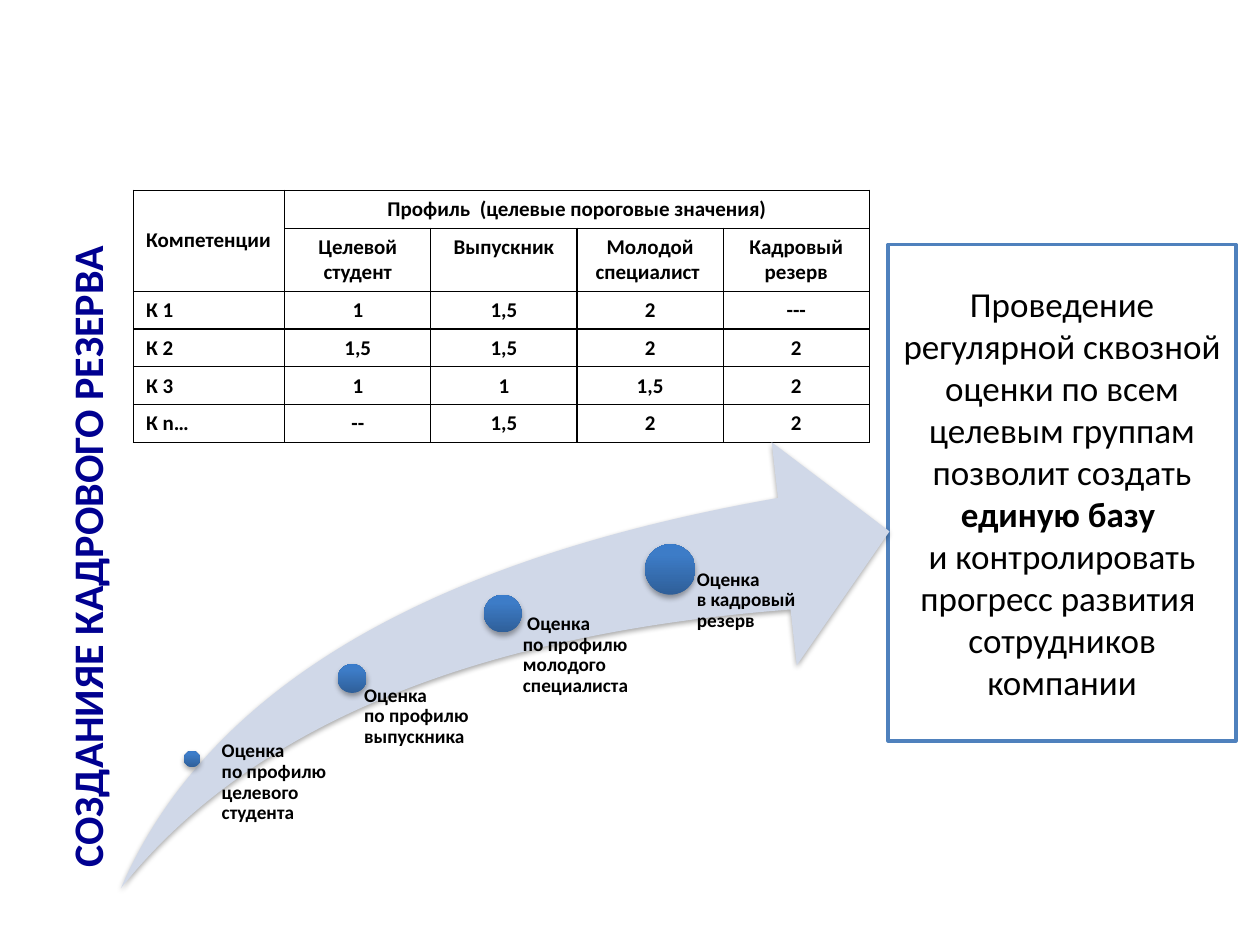
from copy import deepcopy

from lxml import etree
from pptx import Presentation
from pptx.dml.color import RGBColor
from pptx.enum import shapes, text
from pptx.oxml import parse_xml
from pptx.oxml.ns import nsdecls, qn
from pptx.util import Inches, Pt

FONT = "Calibri"
BLACK = RGBColor(0, 0, 0)
WHITE = RGBColor(255, 255, 255)
NAVY = RGBColor(0x00, 0x00, 0x90)
BLUE = RGBColor(0x4F, 0x81, 0xBD)
PALE = RGBColor(0xD0, 0xD8, 0xE8)
BALL = [(0, RGBColor(0x2F, 0x5F, 0x99)),
        (0.8, RGBColor(0x3D, 0x7C, 0xC7)),
        (1, RGBColor(0x3A, 0x7C, 0xCB))]

TITLE = "СОЗДАНИЯЕ КАДРОВОГО РЕЗЕРВА"
HEADS = ["", "Целевой студент", "Выпускник", "Молодой специалист ",
         "Кадровый резерв"]
ROWS = [
    ["Компетенции", "Профиль  (целевые пороговые значения)", "", "", ""],
    HEADS,
    ["К 1", "1", "1,5", "2", "---"],
    ["К 2", "1,5", "1,5", "2", "2"],
    ["К 3", "1", "1", "1,5", "2"],
    ["К n…", "--", "1,5", "2", "2"],
]
# ball left, top, size; label left, top, width, height, inset; wording
STEPS = [
    ((1.46, 5.96, 0.13), (1.69, 5.88, 0.97, 0.84, 0.07),
     "Оценка \vпо профилю целевого студента"),
    ((2.68, 5.27, 0.23), (2.77, 5.44, 1.19, 1.62, 0.12),
     "Оценка \vпо профилю выпускника"),
    ((3.84, 4.72, 0.3), (3.99, 4.87, 1.19, 2.19, 0.16),
     " Оценка \vпо профилю молодого специалиста"),
    ((5.12, 4.32, 0.4), (5.32, 4.52, 1.19, 2.54, 0.21),
     "Оценка \vв кадровый резерв"),
]


def style(para, size, color=BLACK, bold=True):
    for run in para.runs:
        font = run.font
        font.name, font.size, font.bold = FONT, Pt(size), bold
        font.color.rgb = color


def add_text(slide, box, words, size, color=BLACK):
    shape = slide.shapes.add_textbox(*map(Inches, box))
    frame = shape.text_frame
    frame.word_wrap = True
    frame.text = words
    style(frame.paragraphs[0], size, color)
    return shape


def add_shape(slide, kind, box):
    shape = slide.shapes.add_shape(kind, *map(Inches, box))
    shape.shadow.inherit = False
    shape.line.fill.background()
    return shape


def add_shadow(shape):
    shape._element.spPr.find(qn("a:effectLst")).append(parse_xml(
        f'<a:outerShdw {nsdecls("a")} blurRad="40000" dist="23000" '
        'dir="5400000" rotWithShape="0"><a:srgbClr val="000000">'
        '<a:alpha val="35000"/></a:srgbClr></a:outerShdw>'))


def add_title(slide):
    shape = add_text(slide, (-1.92, 4.13, 5.21, 0.5), TITLE, 24, NAVY)
    shape.rotation = 270
    shape.text_frame.vertical_anchor = text.MSO_ANCHOR.MIDDLE


def add_note(slide):
    shape = add_shape(slide, shapes.MSO_SHAPE.RECTANGLE,
                      (7.05, 1.94, 2.76, 3.94))
    shape.fill.solid()
    shape.fill.fore_color.rgb = WHITE
    shape.line.color.rgb = BLUE
    shape.line.width = Pt(2)
    frame = shape.text_frame
    frame.word_wrap = True
    frame.vertical_anchor = text.MSO_ANCHOR.MIDDLE
    first, last = frame.paragraphs[0], frame.add_paragraph()
    first.add_run().text = ("Проведение регулярной сквозной оценки по всем "
                            "целевым группам позволит создать ")
    key = first.add_run()
    key.text = "единую базу "
    first.add_line_break()
    first.add_run().text = "и контролировать прогресс развития "
    last.text = "сотрудников компании"
    for para in (first, last):
        para.alignment = text.PP_ALIGN.CENTER
        style(para, 20, bold=False)
    key.font.bold = True


def add_border(cell):
    props = cell._tc.get_or_add_tcPr()
    for place, side in enumerate(("lnL", "lnR", "lnT", "lnB")):
        line = etree.Element(qn(f"a:{side}"), w=str(Pt(0.75)))
        fill = etree.SubElement(line, qn("a:solidFill"))
        etree.SubElement(fill, qn("a:srgbClr"), val=str(BLACK))
        props.insert(place, line)


def add_grid(slide):
    frame = slide.shapes.add_table(len(ROWS), len(HEADS), Inches(1.06),
                                   Inches(1.51), Inches(5.83), Inches(2))
    table = frame.table
    table.first_row = table.horz_banding = False
    for num, col in enumerate(table.columns):
        col.width = Inches(1.16 if num else 1.2)
    for num, row in enumerate(table.rows):
        row.height = Inches(0.5 if num == 1 else 0.3)
    for y, row in enumerate(ROWS):
        for x, words in enumerate(row):
            cell = table.cell(y, x)
            cell.fill.background()
            add_border(cell)
            cell.text = words
            para = cell.text_frame.paragraphs[0]
            if x:
                para.alignment = text.PP_ALIGN.CENTER
            style(para, 12)
    corner = table.cell(0, 0)
    corner.vertical_anchor = text.MSO_ANCHOR.MIDDLE
    corner.merge(table.cell(1, 0))
    table.cell(0, 1).merge(table.cell(0, 4))


def add_arrow(slide):
    shape = add_shape(slide, shapes.MSO_SHAPE.SWOOSH_ARROW,
                      (0.96, 3.51, 6.1, 3.54))
    shape.adjustments[0] = shape.adjustments[1] = 0.25
    shape.fill.solid()
    shape.fill.fore_color.rgb = PALE
    add_shadow(shape)


def add_ball(slide, left, top, size):
    shape = add_shape(slide, shapes.MSO_SHAPE.OVAL, (left, top, size, size))
    fill = shape.fill
    fill.gradient()
    fill.gradient_angle = 90
    stops = shape._element.spPr.find(".//" + qn("a:gsLst"))
    stops.append(deepcopy(stops[-1]))
    for stop, (place, color) in zip(fill.gradient_stops, BALL):
        stop.position = place
        stop.color.rgb = color
    add_shadow(shape)


def add_label(slide, box, inset, words):
    frame = add_text(slide, box, words, 11).text_frame
    frame.margin_left = Inches(inset)
    frame.margin_top = frame.margin_right = frame.margin_bottom = 0
    frame.paragraphs[0].line_spacing = 0.9


def main():
    deck = Presentation()
    deck.slide_width, deck.slide_height = Inches(10), Inches(7.5)
    slide = deck.slides.add_slide(deck.slide_layouts[6])
    add_title(slide)
    add_note(slide)
    add_grid(slide)
    add_arrow(slide)
    for ball, (*box, inset), words in STEPS:
        add_ball(slide, *ball)
        add_label(slide, box, inset, words)
    deck.save("out.pptx")


if __name__ == "__main__":
    main()
